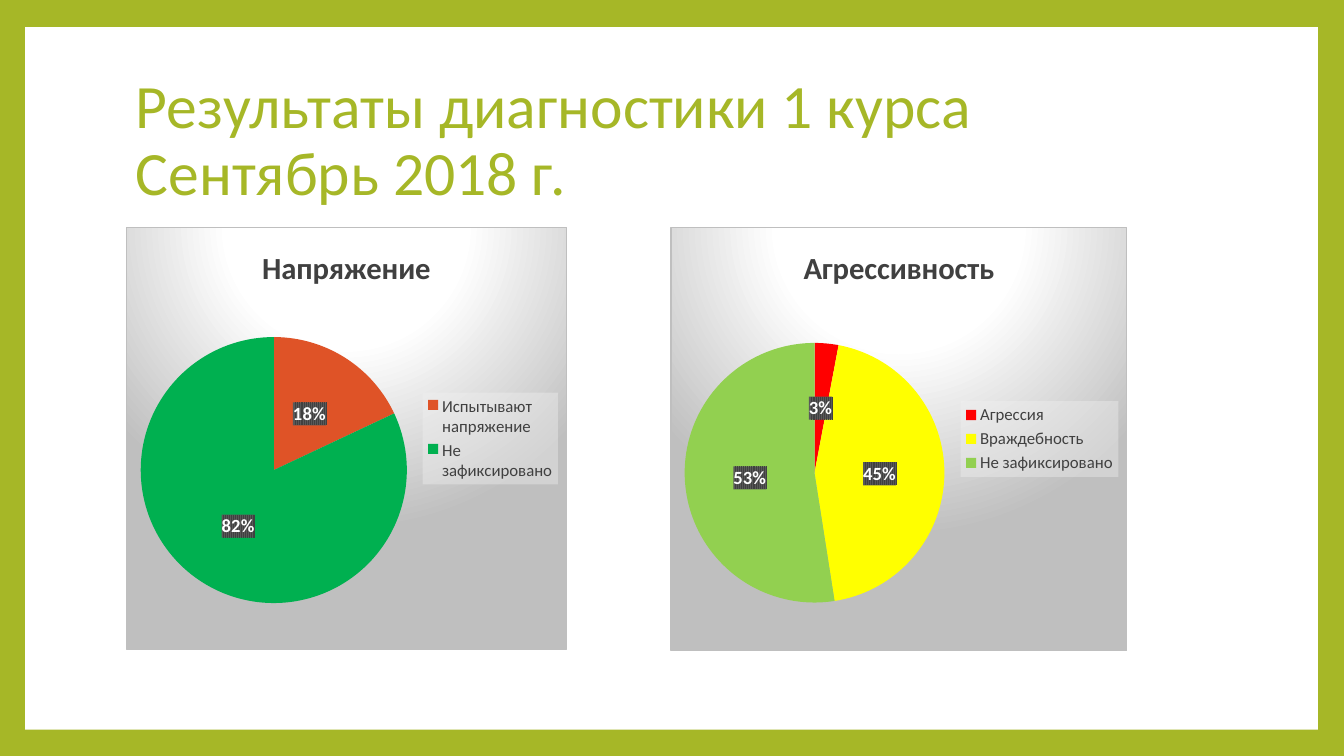
from dataclasses import dataclass

from pptx import Presentation
from pptx.chart.data import CategoryChartData
from pptx.dml.color import RGBColor
from pptx.enum.chart import XL_CHART_TYPE as CT, XL_LABEL_POSITION as LABEL, XL_LEGEND_POSITION as LEGEND
from pptx.enum.shapes import MSO_SHAPE as SHAPE
from pptx.enum.text import MSO_ANCHOR as ANCHOR
from pptx.oxml import parse_xml
from pptx.oxml.ns import nsdecls
from pptx.util import Inches, Pt


@dataclass(frozen=True)
class Theme:
    font: str = "Calibri"
    green: str = "A6B727"
    white: str = "FFFFFF"
    black: str = "000000"
    dark: str = "404040"
    stripe: str = "595959"
    gray: str = "BFBFBF"
    pale: str = "F2F2F2"
    title: float = 44
    chart_title: float = 22
    label: float = 13.3
    legend: float = 12
    base: float = 10


T = Theme()


def set_font(font, size, color, bold=False):
    font.name, font.size, font.bold = T.font, Pt(size), bold
    font.color.rgb = RGBColor.from_string(color)


def clr(color, inner=""):
    return f'<a:srgbClr val="{color}">{inner}</a:srgbClr>'


# Fills of the chart parts, keyed by the text properties they precede
ALPHA = '<a:alpha val="39000"/>'
PART_FILLS = {
    "./c:txPr": f"""<a:gradFill><a:gsLst>
        <a:gs pos="0">{clr(T.white)}</a:gs><a:gs pos="39000">{clr(T.white)}</a:gs>
        <a:gs pos="100000">{clr(T.gray)}</a:gs></a:gsLst>
        <a:path path="circle"><a:fillToRect l="50000" t="-80000" r="50000" b="180000"/></a:path>
        </a:gradFill><a:ln w="9525"><a:solidFill>{clr(T.gray)}</a:solidFill></a:ln>""",
    ".//c:legend/c:txPr": f"<a:solidFill>{clr(T.pale, ALPHA)}</a:solidFill>",
    ".//c:dLbls/c:txPr": f"""<a:pattFill prst="narVert"><a:fgClr>{clr(T.dark)}</a:fgClr>
        <a:bgClr>{clr(T.stripe)}</a:bgClr></a:pattFill>""",
}

# Title, chart box in inches, pie box as chart fractions, slices
CHARTS = [
    ("Напряжение", (1.25, 2.25, 4.37, 4.2), (0.03, 0.26, 0.61, 0.63),
     [("Испытывают напряжение", 18, "DF5327"), ("Не зафиксировано", 82, "00B050")]),
    ("Агрессивность", (6.65, 2.25, 4.53, 4.21), (0.03, 0.27, 0.57, 0.62),
     [("Агрессия", 3, "FF0000"), ("Враждебность", 45, "FFFF00"), ("Не зафиксировано", 53, "92D050")]),
]

prs = Presentation()
prs.slide_width, prs.slide_height = Inches(13.33), Inches(7.5)
s = prs.slides.add_slide(prs.slide_layouts[6])

# Green frame around a white page
s.background.fill.solid()
s.background.fill.fore_color.rgb = RGBColor.from_string(T.green)
page = s.shapes.add_shape(SHAPE.RECTANGLE, Inches(0.25), Inches(0.27), Inches(12.82), Inches(6.97))
page.shadow.inherit = False
page.fill.solid()
page.fill.fore_color.rgb = RGBColor.from_string(T.white)
page.line.fill.background()

# Title
tf = s.shapes.add_textbox(Inches(1.25), Inches(0.67), Inches(10.8), Inches(1.48)).text_frame
tf.word_wrap = True
tf.vertical_anchor = ANCHOR.MIDDLE
p = tf.paragraphs[0]
p.text = "Результаты диагностики 1 курса\nСентябрь 2018 г."
p.line_spacing = 0.9
set_font(p.font, T.title, T.green)

# Pie charts
for title, box, pie_box, slices in CHARTS:
    data = CategoryChartData()
    data.categories = [name for name, _, _ in slices]
    data.add_series(title, [value for _, value, _ in slices])
    chart = s.shapes.add_chart(CT.PIE, *map(Inches, box), data).chart
    set_font(chart.font, T.base, T.black)

    chart.has_title = True
    p = chart.chart_title.text_frame.paragraphs[0]
    p.text = title
    set_font(p.font, T.chart_title, T.dark, bold=True)

    chart.has_legend = True
    chart.legend.position = LEGEND.RIGHT
    chart.legend.include_in_layout = False
    set_font(chart.legend.font, T.legend, T.dark)

    plot = chart.plots[0]
    plot.vary_by_categories = True
    series = plot.series[0]
    for i, (_, _, color) in enumerate(slices):
        fill = series.points[i].format.fill
        fill.solid()
        fill.fore_color.rgb = RGBColor.from_string(color)

    # Values are whole percents, so they are labelled as they stand
    labels = series.data_labels
    labels.show_value = True
    labels.number_format = '0"%"'
    labels.number_format_is_linked = False
    labels.position = LABEL.CENTER
    set_font(labels.font, T.label, T.white, bold=True)

    for target, fill_xml in PART_FILLS.items():
        for tx in chart.element.xpath(target):
            tx.addprevious(parse_xml(f'<c:spPr {nsdecls("c", "a")}>{fill_xml}</c:spPr>'))

    # Place of the pie inside the chart
    area = chart.element.xpath(".//c:plotArea")[0]
    for old in area.xpath("./c:layout"):
        area.remove(old)
    sizes = "".join(f'<c:{k} val="{v}"/>' for k, v in zip("xywh", pie_box))
    area.insert(0, parse_xml(
        f'<c:layout {nsdecls("c")}><c:manualLayout><c:layoutTarget val="inner"/>'
        f'<c:xMode val="edge"/><c:yMode val="edge"/>{sizes}</c:manualLayout></c:layout>'))

prs.save("out.pptx")
